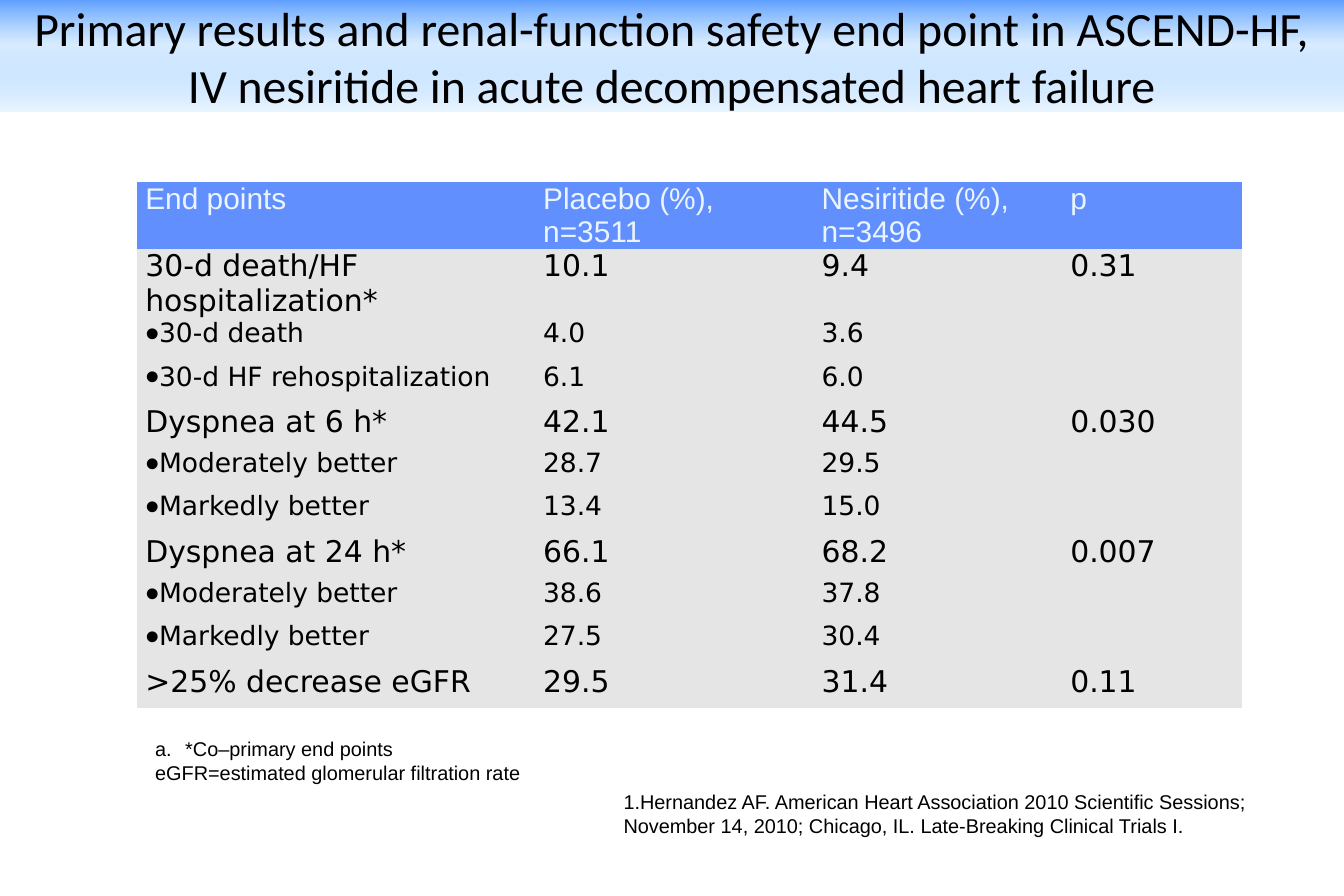
import copy

import lxml.etree
import pptx
import pptx.dml.color
import pptx.enum.text
import pptx.oxml.ns
import pptx.util

Cm = pptx.util.Cm
Pt = pptx.util.Pt
qn = pptx.oxml.ns.qn

NO_STYLE_NO_GRID = "{2D5ABB26-0587-4C30-8999-92F81FD0307C}"
TITLE = ("Primary results and renal-function safety end point in ASCEND-HF, "
         "IV nesiritide in acute decompensated heart failure")
HEADINGS = ("End points", "Placebo (%), n=3511", "Nesiritide (%), n=3496", "p")
# Rows without a p value are components of the end point above them.
END_POINTS = (
    ("30-d death/HF hospitalization*", "10.1", "9.4", "0.31"),
    ("30-d death", "4.0", "3.6", ""),
    ("30-d HF rehospitalization", "6.1", "6.0", ""),
    ("Dyspnea at 6 h*", "42.1", "44.5", "0.030"),
    ("Moderately better", "28.7", "29.5", ""),
    ("Markedly better", "13.4", "15.0", ""),
    ("Dyspnea at 24 h*", "66.1", "68.2", "0.007"),
    ("Moderately better", "38.6", "37.8", ""),
    ("Markedly better", "27.5", "30.4", ""),
    (">25% decrease eGFR", "29.5", "31.4", "0.11"),
)
FOOTNOTES = ("*Co–primary end points", "eGFR=estimated glomerular filtration rate")
REFERENCE = ("1.Hernandez AF. American Heart Association 2010 Scientific Sessions; "
             "November 14, 2010; Chicago, IL. Late-Breaking Clinical Trials I.")

TITLE_FORMAT = {"name": "Calibri", "size": Pt(28.8)}
HEADING_FORMAT = {"name": "Arial", "size": Pt(18)}
END_POINT_FORMAT = {"name": "DejaVu Sans", "size": Pt(18)}
COMPONENT_FORMAT = {"name": "DejaVu Sans", "size": Pt(16)}
NOTE_FORMAT = {"name": "Arial", "size": Pt(12)}


def paint(color_format, color):
    color_format.rgb = pptx.dml.color.RGBColor.from_string(color)


def set_attributes(target, values):
    for name, value in values.items():
        setattr(target, name, value)


def write(para, text, font_format, color="000000"):
    span = para.add_run()
    span.text = text
    set_attributes(span.font, font_format)
    paint(span.font.color, color)


def add_bullet_parts(para, indent, parts):
    """Set the hanging indent and append bullet elements given as (tag, attributes)."""
    properties = para._p.get_or_add_pPr()
    properties.set("marL", str(indent))
    properties.set("indent", str(-indent))
    for tag, attributes in parts:
        lxml.etree.SubElement(properties, qn(tag), attributes)


def fill_title_gradient(fill):
    fill.gradient()
    fill.gradient_angle = 270
    stop_list = fill._xPr.find(qn("a:gradFill")).find(qn("a:gsLst"))
    stop_list.insert(1, copy.deepcopy(stop_list[0]))
    stops = ((0, "5E9EFF"), (0.4, "85C2FF"), (1, "EBF5FF"))
    for stop, (position, color) in zip(fill.gradient_stops, stops):
        stop.position = position
        paint(stop.color, color)
    middle_color = stop_list[1].find(qn("a:srgbClr"))
    lxml.etree.SubElement(middle_color, qn("a:alpha"), {"val": "31000"})


def add_title(page, left, top, width, height):
    title = page.shapes.title
    set_attributes(title, {"left": left, "top": top, "width": width, "height": height})
    fill_title_gradient(title.fill)
    set_attributes(title.text_frame, {
        "word_wrap": True,
        "auto_size": pptx.enum.text.MSO_AUTO_SIZE.NONE,
        "vertical_anchor": pptx.enum.text.MSO_ANCHOR.MIDDLE,
    })
    para = title.text_frame.paragraphs[0]
    para.alignment = pptx.enum.text.PP_ALIGN.CENTER
    write(para, TITLE, TITLE_FORMAT)


def fill_cell(cell, text, font_format, color, background, bulleted):
    cell.fill.solid()
    paint(cell.fill.fore_color, background)
    set_attributes(cell, {"margin_left": Cm(0.18), "margin_right": Cm(0.18),
                          "margin_top": 0, "margin_bottom": 0})
    if not text:
        return
    para = cell.text_frame.paragraphs[0]
    para.space_after = Pt(6)
    if bulleted:
        add_bullet_parts(para, 0, (("a:buSzPct", {"val": "150000"}),
                                   ("a:buFont", {"typeface": "Arial"}),
                                   ("a:buChar", {"char": "•"})))
    write(para, text, font_format, color)


def add_results_table(page, left, top, width, height):
    rows = (HEADINGS,) + END_POINTS
    table = page.shapes.add_table(len(rows), len(HEADINGS), left, top, width, height).table
    table.horz_banding = False
    table._tbl.tblPr.find(qn("a:tableStyleId")).text = NO_STYLE_NO_GRID
    for column, share in zip(table.columns, (0.36, 0.252, 0.225, 0.163)):
        column.width = int(width * share)
    for row_index, values in enumerate(rows):
        is_heading = row_index == 0
        is_component = not values[-1]
        table.rows[row_index].height = Cm(1.37 if is_heading else 0.92)
        if is_heading:
            font_format, color, background = HEADING_FORMAT, "EBF5FF", "618FFD"
        else:
            font_format = COMPONENT_FORMAT if is_component else END_POINT_FORMAT
            color, background = "000000", "E5E5E5"
        for column_index, text in enumerate(values):
            fill_cell(table.cell(row_index, column_index), text, font_format, color,
                      background, is_component and column_index == 0)


def add_note_box(page, left, top, width, height):
    box = page.shapes.add_textbox(left, top, width, height)
    box.text_frame.word_wrap = True
    return box.text_frame


def add_footnotes(page, left, top, width, height):
    frame = add_note_box(page, left, top, width, height)
    frame.margin_left = Cm(0.13)
    bullets = (("a:buAutoNum", {"type": "alphaLcPeriod"}), ("a:buNone", {}))
    for index, (text, bullet) in enumerate(zip(FOOTNOTES, bullets)):
        para = frame.add_paragraph() if index else frame.paragraphs[0]
        add_bullet_parts(para, Cm(0.64), (bullet,))
        write(para, text, NOTE_FORMAT)


def add_reference(page, left, top, width, height):
    frame = add_note_box(page, left, top, width, height)
    write(frame.paragraphs[0], REFERENCE, NOTE_FORMAT)


def main():
    deck = pptx.Presentation()
    deck.slide_width, deck.slide_height = Cm(28.58), Cm(19.05)
    page = deck.slides.add_slide(deck.slide_layouts[5])
    add_title(page, 0, 0, deck.slide_width, Cm(2.38))
    add_results_table(page, Cm(2.91), Cm(3.87), Cm(23.5), Cm(10.57))
    add_footnotes(page, Cm(3.17), Cm(15.54), Cm(19.69), Cm(1.3))
    add_reference(page, Cm(13.01), Cm(16.67), Cm(14.29), Cm(1.28))
    deck.save("out.pptx")


if __name__ == "__main__":
    main()
